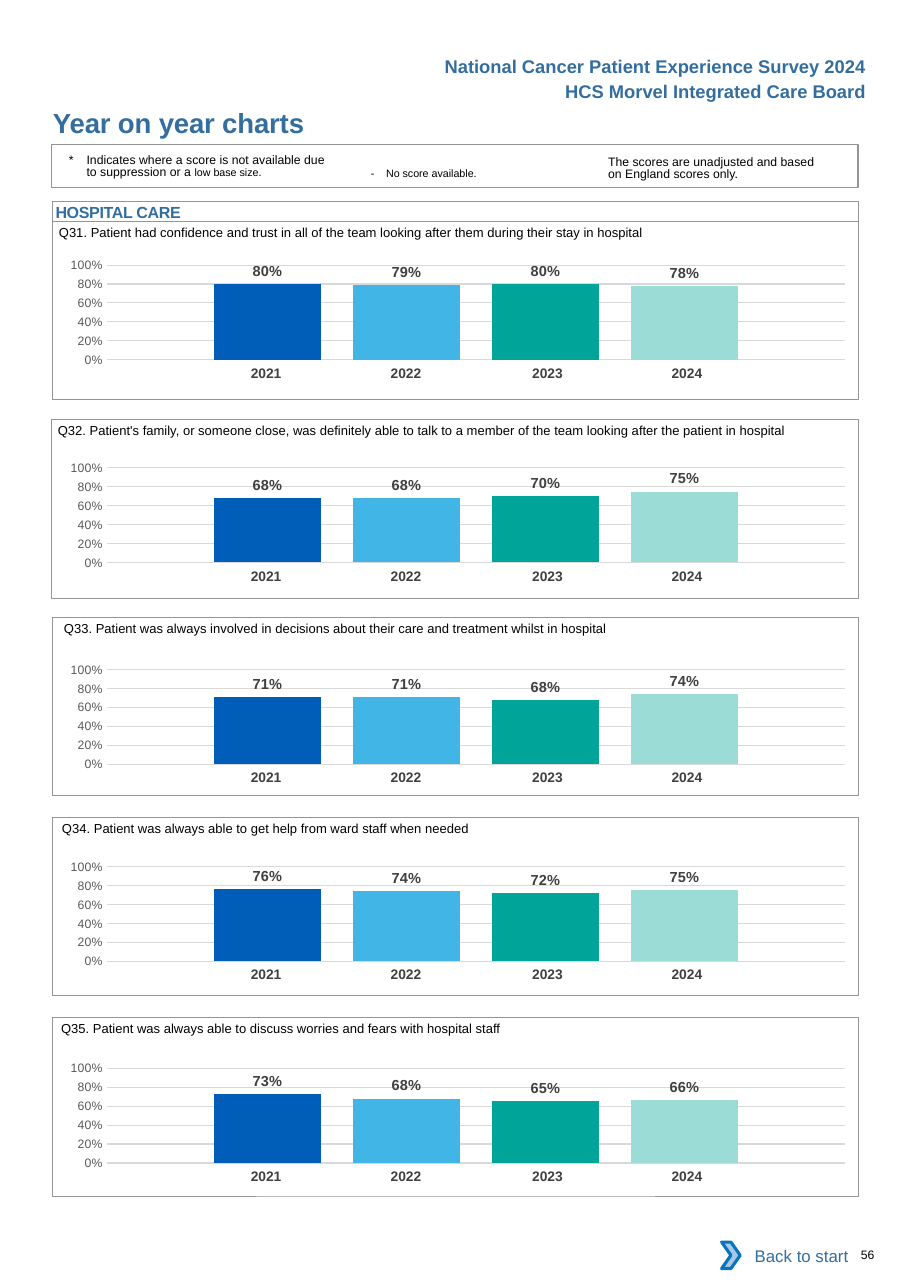
from lxml.etree import SubElement
from pptx import Presentation
from pptx.chart.data import CategoryChartData
from pptx.dml.color import RGBColor
from pptx.enum.chart import XL_CHART_TYPE, XL_LABEL_POSITION, XL_TICK_MARK
from pptx.enum.shapes import MSO_SHAPE
from pptx.enum.text import MSO_ANCHOR, PP_ALIGN
from pptx.oxml.ns import qn
from pptx.util import Pt

BLUE = RGBColor(0x33, 0x6E, 0x9F)
BLACK = RGBColor(0, 0, 0)
WHITE = RGBColor(255, 255, 255)
FRAME = RGBColor(0x93, 0x95, 0x98)
GRID = RGBColor(0xD9, 0xD9, 0xD9)
AXIS = RGBColor(0x59, 0x59, 0x59)
LABEL = RGBColor(0x40, 0x40, 0x40)
YEAR = RGBColor(0x41, 0x40, 0x42)
ARROW = RGBColor(0xA8, 0xC7, 0xE9)
ARROW_LINE = RGBColor(0x0A, 0x74, 0xBB)
BARS = [RGBColor(0x00, 0x5E, 0xB8), RGBColor(0x41, 0xB6, 0xE6),
        RGBColor(0x00, 0xA4, 0x99), RGBColor(0x9C, 0xDC, 0xD7)]

YEARS = ["2021", "2022", "2023", "2024"]
YEAR_WIDTHS = [91.4, 91.4, 96.5, 91.4]
YEAR_RIGHT_MARGINS = [0, 0, 3, 8.6]
NO_STYLE = "{2D5ABB26-0587-4C30-8999-92F81FD0307C}"
WIDTH = 527

PANELS = [
    (34.3, 144.7, 4.2, 15.1, [0.80, 0.79, 0.80, 0.78],
     "Q31. Patient had confidence and trust in all of the team looking after them during their stay in hospital"),
    (33.8, 274.3, 4, 18, [0.68, 0.68, 0.70, 0.75],
     "Q32. Patient's family, or someone close, was definitely able to talk to a member of the team "
     "looking after the patient in hospital"),
    (34.3, 403.2, 7.5, 20.9, [0.71, 0.71, 0.68, 0.74],
     "Q33. Patient was always involved in decisions about their care and treatment whilst in hospital"),
    (34.3, 534.2, 6.2, 18.7, [0.76, 0.74, 0.72, 0.75],
     "Q34. Patient was always able to get help from ward staff when needed"),
    (34.3, 665, 5.6, 19.7, [0.73, 0.68, 0.65, 0.66],
     "Q35. Patient was always able to discuss worries and fears with hospital staff"),
]


def set_font(font, size, color, bold=False):
    font.name, font.size, font.bold = "Arial", Pt(size), bold
    font.color.rgb = color


def set_margins(obj, left=0, top=0, right=0, bottom=0):
    obj.margin_left, obj.margin_top = Pt(left), Pt(top)
    obj.margin_right, obj.margin_bottom = Pt(right), Pt(bottom)


def write(sp, text, size, color, bold=False, align=PP_ALIGN.LEFT, anchor=MSO_ANCHOR.TOP):
    tf = sp.text_frame
    tf.word_wrap = True
    tf.vertical_anchor = anchor
    set_margins(tf)
    p = tf.paragraphs[0]
    p.alignment = align
    p.text = text
    set_font(p.font, size, color, bold)
    return p


def add_text(s, box, text, size, color=BLACK, **kwargs):
    return write(s.shapes.add_textbox(*map(Pt, box)), text, size, color, **kwargs)


def add_frame(s, box, kind=MSO_SHAPE.RECTANGLE, line=FRAME, weight=0.5, fill=None):
    sp = s.shapes.add_shape(kind, *map(Pt, box))
    sp.shadow.inherit = False
    if fill is None:
        sp.fill.background()
    else:
        sp.fill.solid()
        sp.fill.fore_color.rgb = fill
    if line is None:
        sp.line.fill.background()
    else:
        sp.line.color.rgb = line
        sp.line.width = Pt(weight)
    return sp


def hang(p, indent):
    pPr = p._p.get_or_add_pPr()
    pPr.set("marL", str(Pt(indent)))
    pPr.set("indent", str(-Pt(indent)))


def add_header(s):
    lines = ["National Cancer Patient Experience Survey 2024", "HCS Morvel Integrated Care Board"]
    for i, text in enumerate(lines):
        add_text(s, (265, 36.1 + 16.1 * i, 301, 14.4), text, 12, BLUE, bold=True, align=PP_ALIGN.RIGHT)
    title = s.shapes.title
    title.left, title.top, title.width, title.height = map(Pt, (34.6, 69.1, 324, 21.6))
    p = write(title, "Year on year charts", 18, BLUE, bold=True)
    p.runs[0]._r.get_or_add_rPr().set("spc", "-10")


def add_notes(s, left, top):
    add_frame(s, (left, top, WIDTH, 28.1), weight=0.75)
    p = add_text(s, (left + 11.3, top + 6.6, 172, 18), "*\t", 8)
    hang(p, 11.5)
    p.line_spacing = Pt(8.1)
    for text, size in [("Indicates where a score is not available due to suppression or a ", 8),
                       ("low base size.", 7)]:
        r = p.add_run()
        r.text = text
        r.font.size = Pt(size)
    hang(add_text(s, (left + 208.5, top + 14.8, 120, 10), "-\tNo score available.", 7), 10)
    p = add_text(s, (left + 363.6, top + 7.8, 144, 18),
                 "The scores are unadjusted and based on England scores only.", 8)
    p.line_spacing = Pt(8.1)


def add_bars(s, box, values):
    data = CategoryChartData(number_format="0%")
    data.categories = ["1"]
    for i, value in enumerate(values, 1):
        data.add_series(f"Series {i}", [value])
    chart = s.shapes.add_chart(XL_CHART_TYPE.COLUMN_CLUSTERED, *map(Pt, box), data).chart
    chart.has_legend = chart.has_title = False
    chart.font.name, chart.font.size = "Calibri", Pt(10)
    chart.category_axis.visible = False
    axis = chart.value_axis
    axis.minimum_scale, axis.maximum_scale, axis.major_unit = 0, 1, 0.2
    axis.major_tick_mark = axis.minor_tick_mark = XL_TICK_MARK.NONE
    axis.format.line.fill.background()
    axis.major_gridlines.format.line.color.rgb = GRID
    axis.major_gridlines.format.line.width = Pt(0.75)
    axis.tick_labels.number_format, axis.tick_labels.number_format_is_linked = "0%", False
    set_font(axis.tick_labels.font, 8, AXIS)
    plot = chart.plots[0]
    plot.gap_width, plot.overlap, plot.vary_by_categories = 200, -30, False
    for series, color in zip(plot.series, BARS):
        series.format.fill.solid()
        series.format.fill.fore_color.rgb = color
        labels = series.data_labels
        labels.show_value, labels.position = True, XL_LABEL_POSITION.OUTSIDE_END
        labels.number_format, labels.number_format_is_linked = "0%", False
        set_font(labels.font, 9.5, LABEL, True)
    area = chart._chartSpace.chart.plotArea
    for old in area.findall(qn("c:layout")):
        area.remove(old)
    layout = SubElement(area, qn("c:layout"))
    area.insert(0, layout)
    manual = SubElement(layout, qn("c:manualLayout"))
    for tag, val in [("layoutTarget", "inner"), ("xMode", "edge"), ("yMode", "edge"),
                     ("x", 0.079), ("y", 0.145), ("w", 0.915), ("h", 0.666)]:
        SubElement(manual, qn(f"c:{tag}")).set("val", str(val))


def add_years(s, left, top):
    frame = s.shapes.add_table(1, len(YEARS), Pt(left), Pt(top), Pt(sum(YEAR_WIDTHS)), Pt(19.4))
    table = frame.table
    table.first_row = table.horz_banding = False
    next(frame._element.iter(qn("a:tableStyleId"))).text = NO_STYLE
    for i, year in enumerate(YEARS):
        table.columns[i].width = Pt(YEAR_WIDTHS[i])
        cell = table.cell(0, i)
        cell.fill.background()
        set_margins(cell, 7.2, 3.6, YEAR_RIGHT_MARGINS[i], 3.6)
        p = cell.text_frame.paragraphs[0]
        p.text = year
        p.alignment = PP_ALIGN.CENTER
        set_font(p.font, 9, YEAR, True)


def add_panel(s, left, top, indent, chart_drop, values, question):
    chart_top = top + chart_drop
    add_bars(s, (28.4, chart_top, WIDTH, 92.9), values)
    add_years(s, 124.6, chart_top + 75.7)
    add_frame(s, (left, top, WIDTH, 116.6))
    add_text(s, (left + indent, top + 2, WIDTH - indent, 10), question, 8.5)


def add_section(s, left, top):
    sp = add_frame(s, (left, top, WIDTH, 13))
    p = write(sp, "HOSPITAL CARE", 10.5, BLUE, bold=True, anchor=MSO_ANCHOR.MIDDLE)
    p._p.get_or_add_pPr().set("marL", str(Pt(2)))
    p.runs[0]._r.get_or_add_rPr().set("spc", "-20")


def add_footer(s, left, top):
    sp = add_frame(s, (left + 5, top, 85, 30.2), line=None, fill=WHITE)
    write(sp, "Back to start", 11, BLUE, align=PP_ALIGN.RIGHT, anchor=MSO_ANCHOR.MIDDLE)
    sp.text_frame.margin_right = Pt(7.2)
    add_frame(s, (left, top + 6.5, 12.2, 17.3), MSO_SHAPE.CHEVRON, ARROW_LINE, 2, ARROW)
    add_text(s, (left + 91, top + 10, 29, 9.4), "56", 8)


def main():
    prs = Presentation()
    prs.slide_width, prs.slide_height = Pt(594.72), Pt(841.68)
    s = prs.slides.add_slide(prs.slide_layouts[5])
    add_header(s)
    add_notes(s, 33.8, 94.3)
    add_section(s, 34.3, 131.8)
    for panel in PANELS:
        add_panel(s, *panel)
    add_footer(s, 471.6, 805.2)
    prs.save("out.pptx")


if __name__ == "__main__":
    main()
